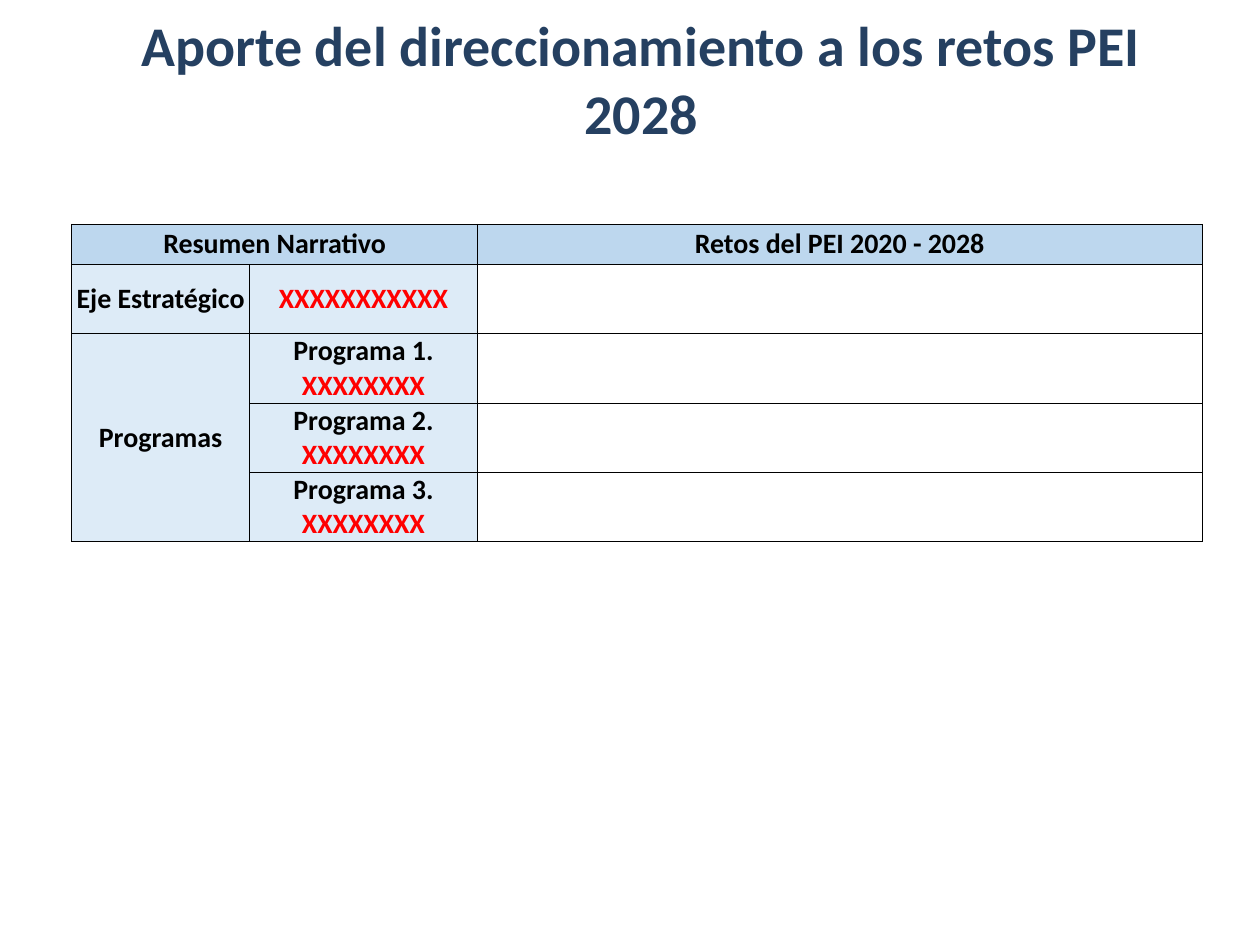
from lxml import etree
from pptx import Presentation
from pptx.dml.color import RGBColor
from pptx.enum.text import MSO_ANCHOR, PP_ALIGN
from pptx.oxml.ns import qn
from pptx.util import Inches, Pt

CENTER = PP_ALIGN.CENTER
MIDDLE = MSO_ANCHOR.MIDDLE
TITLE_ONLY = 5

BLACK, RED, NAVY = "000000", "FF0000", "254061"
HEADER_BLUE, LABEL_BLUE = "BDD7EE", "DDEBF7"
TITLE_FORMAT = {"name": "Calibri", "size": Pt(32), "bold": True}
CELL_FORMAT = {"name": "Calibri", "size": Pt(16), "bold": True}
MARGINS = ("margin_left", "margin_right", "margin_top", "margin_bottom")

COLUMN_WIDTHS = (1.41, 1.81, 5.75)
ROW_HEIGHTS = (0.32,) + (0.55,) * 4


def color(hex_value):
    return RGBColor.from_string(hex_value)


def write_runs(paragraph, runs, font_format):
    paragraph.alignment = CENTER
    for text, hex_value in runs:
        run = paragraph.add_run()
        run.text = text
        for name, value in font_format.items():
            setattr(run.font, name, value)
        run.font.color.rgb = color(hex_value)


def add_borders(cell):
    properties = cell._tc.get_or_add_tcPr()
    for position, side in enumerate(("lnL", "lnR", "lnT", "lnB")):
        line = etree.Element(qn(f"a:{side}"), w=str(Pt(0.5)))
        fill = etree.SubElement(line, qn("a:solidFill"))
        etree.SubElement(fill, qn("a:srgbClr"), val=BLACK)
        properties.insert(position, line)


def fill_cell(cell, runs, fill_color):
    cell.vertical_anchor = MIDDLE
    for margin in MARGINS:
        setattr(cell, margin, 0)
    cell.fill.solid()
    cell.fill.fore_color.rgb = color(fill_color)
    write_runs(cell.text_frame.paragraphs[0], runs, CELL_FORMAT)


def add_title(slide, left, top, width, height):
    title = slide.shapes.title
    title.left, title.top = Inches(left), Inches(top)
    title.width, title.height = Inches(width), Inches(height)
    title.text_frame.vertical_anchor = MIDDLE
    title.text_frame.word_wrap = True
    runs = [("Aporte del direccionamiento a los retos PEI 2028", NAVY)]
    write_runs(title.text_frame.paragraphs[0], runs, TITLE_FORMAT)


def add_challenges_table(slide, left, top):
    frame = slide.shapes.add_table(
        len(ROW_HEIGHTS), len(COLUMN_WIDTHS), Inches(left), Inches(top),
        Inches(sum(COLUMN_WIDTHS)), Inches(sum(ROW_HEIGHTS)))
    table = frame.table
    table.first_row = table.horz_banding = False
    for column, width in zip(table.columns, COLUMN_WIDTHS):
        column.width = Inches(width)
    for row, height in zip(table.rows, ROW_HEIGHTS):
        row.height = Inches(height)
    for cell in table.iter_cells():
        cell.fill.background()
        add_borders(cell)

    # Merged areas
    table.cell(0, 0).merge(table.cell(0, 1))
    table.cell(2, 0).merge(table.cell(4, 0))

    # Header row
    fill_cell(table.cell(0, 0), [("Resumen Narrativo", BLACK)], HEADER_BLUE)
    fill_cell(table.cell(0, 2), [("Retos del PEI 2020 - 2028", BLACK)], HEADER_BLUE)

    # Strategic axis and programmes
    fill_cell(table.cell(1, 0), [("Eje Estratégico", BLACK)], LABEL_BLUE)
    fill_cell(table.cell(1, 1), [("XXXXXXXXXXX", RED)], LABEL_BLUE)
    fill_cell(table.cell(2, 0), [("Programas", BLACK)], LABEL_BLUE)
    for number in range(1, 4):
        runs = [(f"Programa {number}. ", BLACK), ("XXXXXXXX", RED)]
        fill_cell(table.cell(number + 1, 1), runs, LABEL_BLUE)


def main():
    presentation = Presentation()
    presentation.slide_width, presentation.slide_height = Inches(10), Inches(7.5)
    slide = presentation.slides.add_slide(presentation.slide_layouts[TITLE_ONLY])
    add_title(slide, 0.59, 0.21, 9, 0.82)
    add_challenges_table(slide, 0.57, 1.78)
    presentation.save("out.pptx")


if __name__ == "__main__":
    main()
